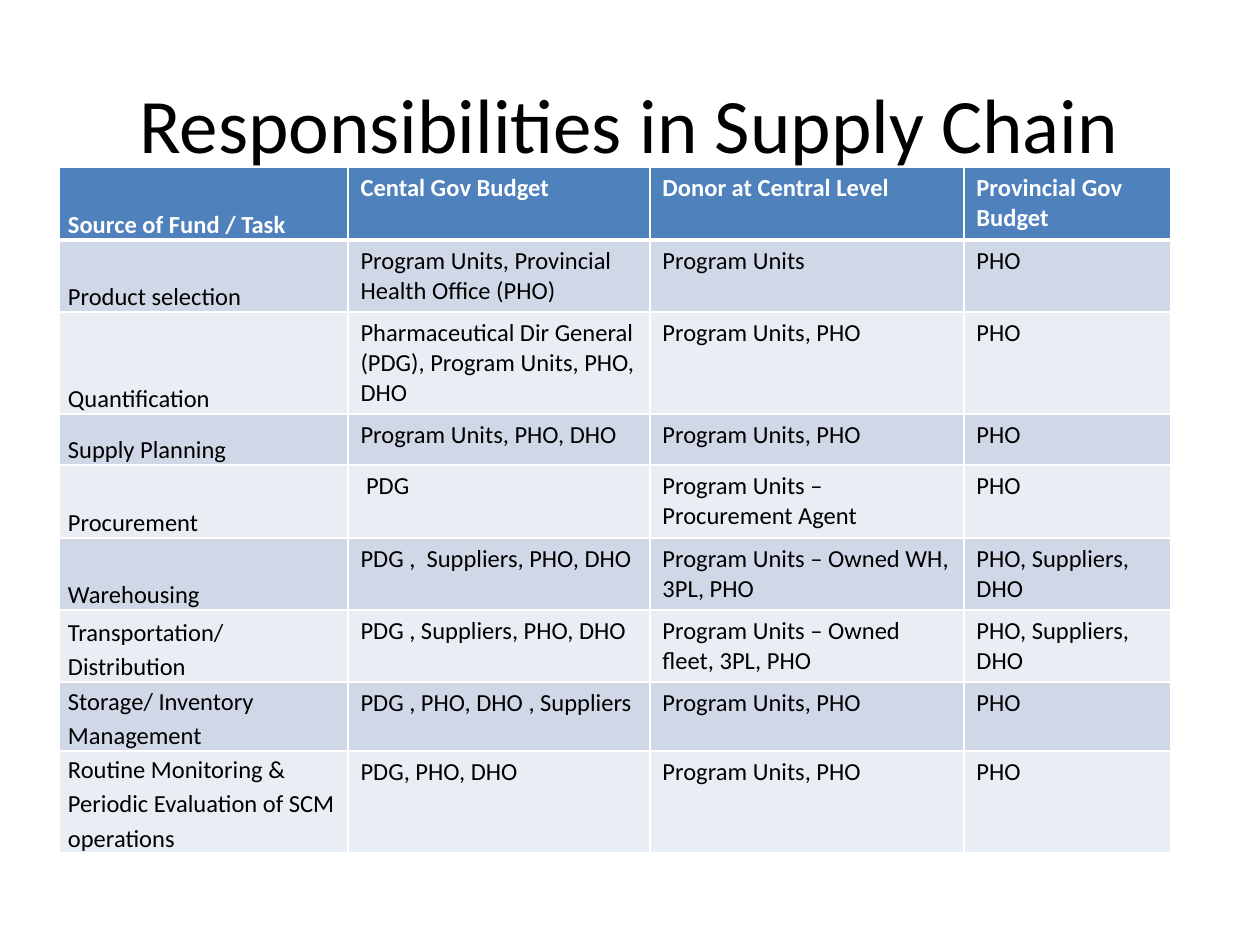
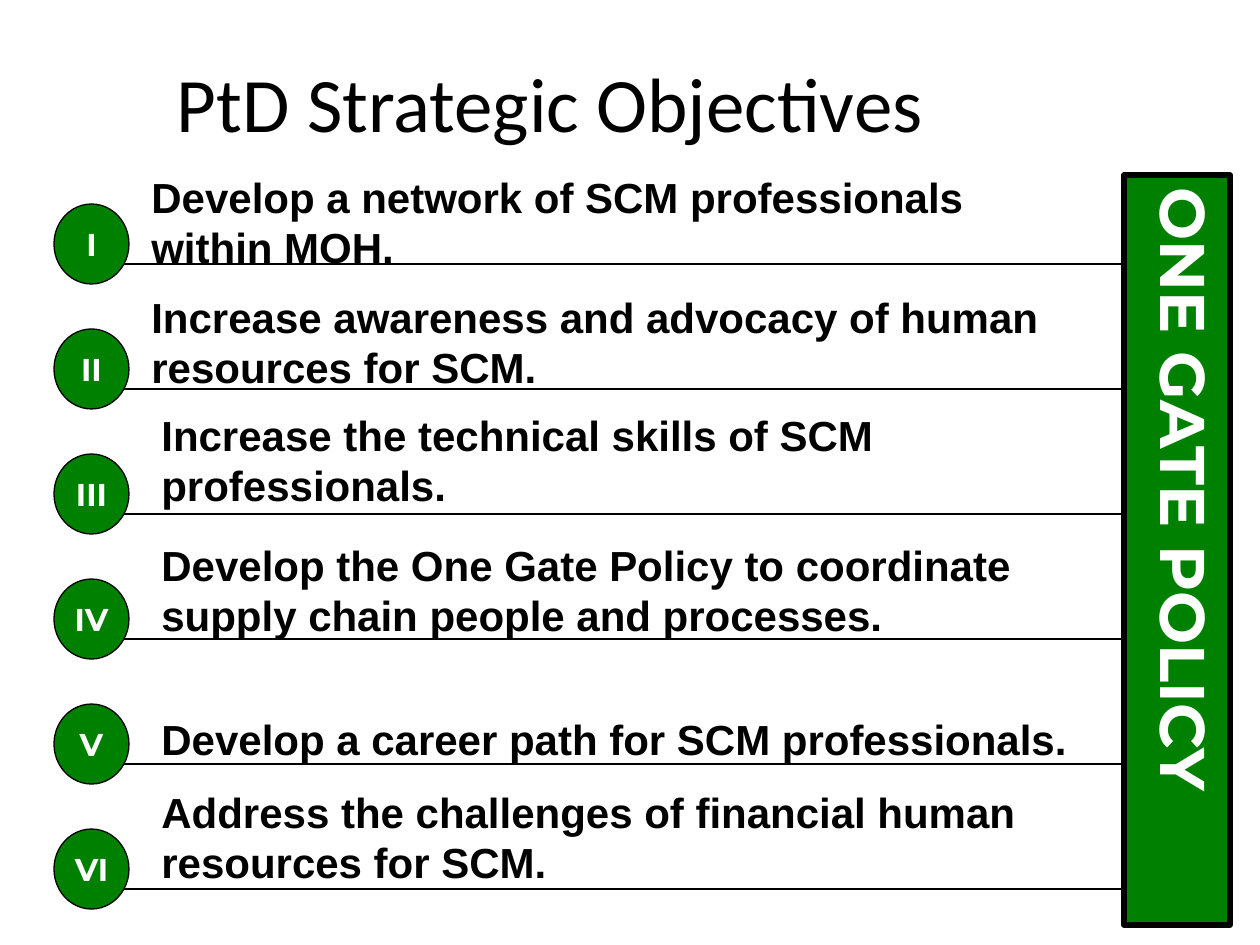
from lxml.etree import SubElement
from pptx import Presentation
from pptx.dml.color import RGBColor
from pptx.enum.shapes import MSO_CONNECTOR, MSO_SHAPE
from pptx.enum.text import MSO_ANCHOR, PP_ALIGN
from pptx.oxml import parse_xml
from pptx.oxml.ns import nsdecls, qn
from pptx.util import Pt

SCALE = 914400 / 126
BLACK, WHITE, GREEN = "000000", "FFFFFF", "008000"
HEAD, BANDS = "4F81BD", ("D0D8E8", "E9EDF4")

TASKS = [
    ("Source of Fund / Task", "Cental Gov Budget", "Donor at Central Level", "Provincial Gov Budget"),
    ("Product selection", "Program Units, Provincial Health Office (PHO)", "Program Units", "PHO"),
    ("Quantification", "Pharmaceutical Dir General (PDG), Program Units, PHO, DHO",
     "Program Units, PHO", "PHO"),
    ("Supply Planning", "Program Units, PHO, DHO", "Program Units, PHO", "PHO"),
    ("Procurement", " PDG", "Program Units – Procurement Agent", "PHO"),
    ("Warehousing", "PDG ,  Suppliers, PHO, DHO", "Program Units – Owned WH, 3PL, PHO",
     "PHO, Suppliers, DHO"),
    ("Transportation/ Distribution", "PDG , Suppliers, PHO, DHO",
     "Program Units – Owned fleet, 3PL, PHO", "PHO, Suppliers, DHO"),
    ("Storage/ Inventory Management", "PDG , PHO, DHO , Suppliers", "Program Units, PHO", "PHO"),
    ("Routine Monitoring & Periodic Evaluation of SCM operations", "PDG, PHO, DHO",
     "Program Units, PHO", "PHO"),
]
WIDTHS = (289, 302, 314, 207)
HEIGHTS = (73, 72, 102, 51, 73, 72, 72, 69, 102)

GOALS = [
    ("I", 139, 165, "Develop a network of SCM professionals within MOH."),
    ("II", 139, 285, "Increase awareness and advocacy of human resources for SCM."),
    ("III", 149, 403, "Increase the technical skills of SCM professionals."),
    ("IV", 149, 533, "Develop the One Gate Policy to coordinate supply chain people and processes."),
    ("V", 149, 707, "Develop a career path for SCM professionals."),
    ("VI", 149, 780, "Address the challenges of financial human resources for SCM."),
]


def px(num):
    return round(num * SCALE)


def color(code):
    return RGBColor.from_string(code)


class Deck:
    def __init__(self):
        self.prs = Presentation()
        self.prs.slide_width, self.prs.slide_height = px(1260), px(945)
        self.slide = None

    def page(self):
        self.slide = self.prs.slides.add_slide(self.prs.slide_layouts[6])

    def label(self, frame, text, size, face, tint=BLACK, bold=False, align=PP_ALIGN.LEFT):
        para = frame.paragraphs[0]
        para.text = text
        para.alignment = align
        font = para.font
        font.size, font.name, font.bold = Pt(size), face, bold
        font.color.rgb = color(tint)
        return para

    def text(self, box, text, size, face, anchor=MSO_ANCHOR.TOP, **style):
        frame = self.slide.shapes.add_textbox(*map(px, box)).text_frame
        frame.word_wrap = True
        frame.vertical_anchor = anchor
        self.label(frame, text, size, face, **style)

    def title(self, box, text, align=PP_ALIGN.LEFT):
        self.text(box, text, 44, "Calibri", MSO_ANCHOR.MIDDLE, align=align)

    def shape(self, kind, box, weight, text, size, align=PP_ALIGN.CENTER):
        item = self.slide.shapes.add_shape(kind, *map(px, box))
        item.shadow.inherit = False
        item.fill.solid()
        item.fill.fore_color.rgb = color(GREEN)
        item.line.color.rgb = color(BLACK)
        item.line.width = Pt(weight)
        self.label(item.text_frame, text, size, "Montserrat", WHITE, True, align)
        return item.text_frame

    def badge(self, box, text):
        frame = self.shape(MSO_SHAPE.OVAL, box, 0.75, text, 18)
        frame.word_wrap = False
        frame.vertical_anchor = MSO_ANCHOR.MIDDLE

    def banner(self, box, text):
        frame = self.shape(MSO_SHAPE.RECTANGLE, box, 3, text, 36, PP_ALIGN.LEFT)
        frame.vertical_anchor = MSO_ANCHOR.TOP
        frame._txBody.bodyPr.set("vert", "eaVert")

    def rule(self, left, right, top):
        line = self.slide.shapes.add_connector(
            MSO_CONNECTOR.STRAIGHT, px(left), px(top), px(right), px(top))
        line.line.color.rgb = color(BLACK)
        line.line.width = Pt(0.75)
        SubElement(line._element.spPr, qn("a:effectLst"))

    def edges(self, cell, row):
        widths = {"L": 1, "R": 1, "T": 3 if row == 1 else 1, "B": 3 if row == 0 else 1}
        props = cell._tc.get_or_add_tcPr()
        for spot, (side, width) in enumerate(widths.items()):
            props.insert(spot, parse_xml(
                f'<a:ln{side} {nsdecls("a")} w="{Pt(width)}"><a:solidFill>'
                f'<a:srgbClr val="{WHITE}"/></a:solidFill></a:ln{side}>'))

    def table(self, left, top, rows, widths, heights):
        grid = self.slide.shapes.add_table(
            len(rows), len(widths), px(left), px(top), px(sum(widths)), px(sum(heights))).table
        for col, width in zip(grid.columns, widths):
            col.width = px(width)
        for num, (row, height) in enumerate(zip(rows, heights)):
            grid.rows[num].height = px(height)
            for col, text in enumerate(row):
                self.cell(grid.cell(num, col), num, col, text)

    def cell(self, cell, row, col, text):
        head = row == 0
        cell.fill.solid()
        cell.fill.fore_color.rgb = color(HEAD if head else BANDS[(row - 1) % 2])
        para = self.label(cell.text_frame, text, 14, "Calibri", WHITE if head else BLACK, head)
        if col == 0:
            para.line_spacing = 1.15
            cell.vertical_anchor = MSO_ANCHOR.BOTTOM
            cell.margin_left = cell.margin_right = px(9)
            cell.margin_top = cell.margin_bottom = 0
        self.edges(cell, row)


def main():
    deck = Deck()
    deck.page()
    deck.title((94, 21, 1071, 203), "Responsibilities in Supply Chain", PP_ALIGN.CENTER)
    deck.table(59, 167, TASKS, WIDTHS, HEIGHTS)

    deck.page()
    deck.title((164, 38, 1033, 127), "PtD Strategic Objectives")
    for num, (mark, *_) in enumerate(GOALS):
        step = 125 * num
        deck.rule(89, 1142, 264 + step)
        deck.badge((54, 204 + step, 75, 80), mark)
    deck.banner((1124, 175, 106, 750), "ONE GATE POLICY")
    for mark, left, top, goal in GOALS:
        deck.text((left, top, 942, 63 if mark == "V" else 113), goal, 24, "Arial", bold=True)
    deck.prs.save("out.pptx")


if __name__ == "__main__":
    main()
